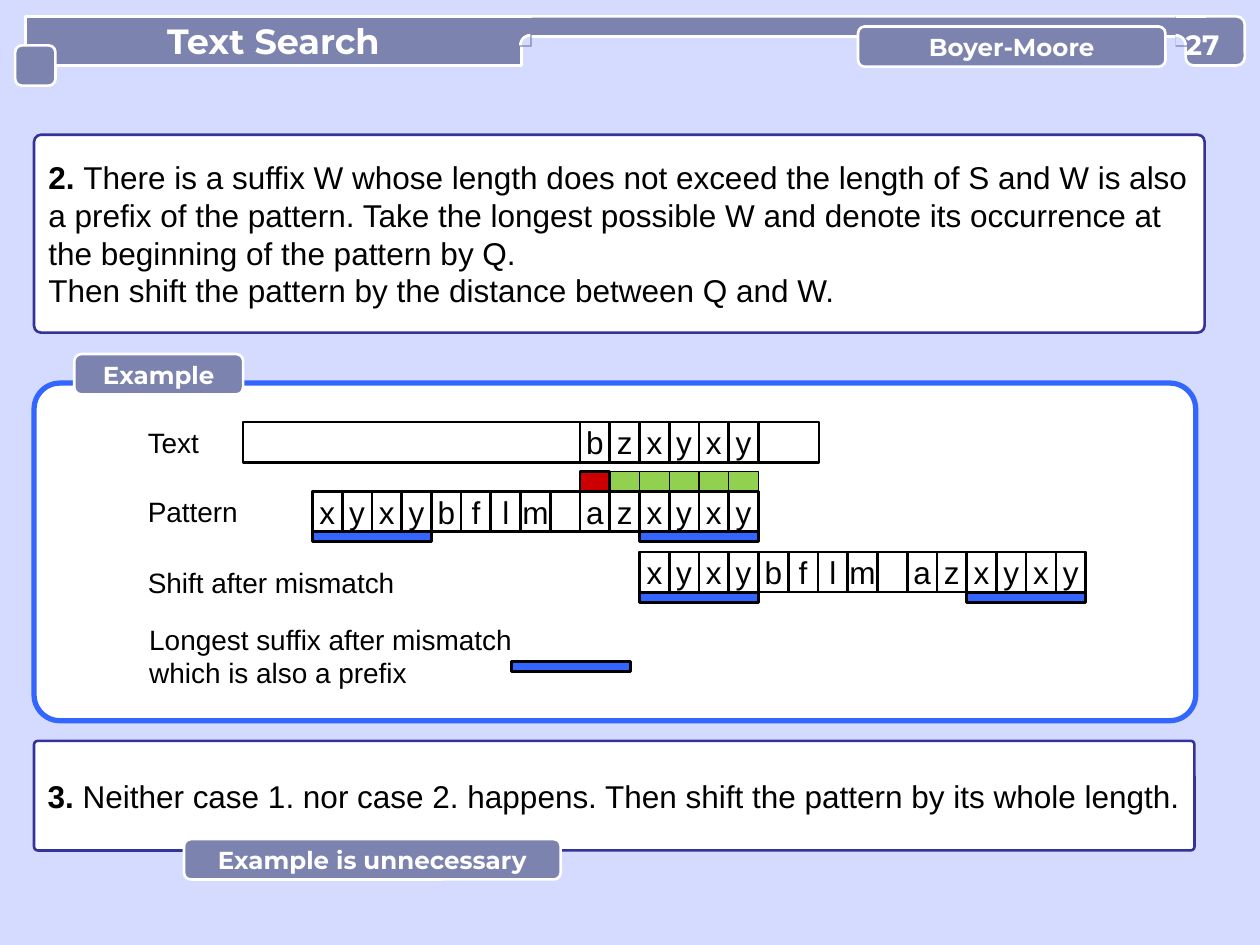
from math import cos, pi, sin

from lxml.etree import SubElement
from pptx import Presentation
from pptx.dml.color import RGBColor
from pptx.enum.shapes import MSO_CONNECTOR as Connector, MSO_SHAPE as Shape
from pptx.enum.text import MSO_ANCHOR as Anchor, MSO_AUTO_SIZE as AutoSize, PP_ALIGN as Align
from pptx.oxml.ns import qn
from pptx.util import Inches, Pt

COLORS = {
    "background": "D5DAFF", "header": "7D83AF", "white": "FFFFFF", "black": "000000",
    "rule": "333399", "blue": "3366FF", "red": "CC0000", "green": "92D050",
}
PATTERN = "xyxybflm azxyxy"
SUFFIX = "bzxyxy"
CELL, ROW = 3.54 / len(PATTERN), 0.32
BAR, MARK = 0.08, 0.16
BORDER = 4
SHIFT = len(PATTERN) - BORDER
MISMATCH = len(PATTERN) - len(SUFFIX)


def color(name):
    return RGBColor.from_string(COLORS[name])


def paint(shape, fill, line=None, weight=1.5):
    if fill:
        shape.fill.solid()
        shape.fill.fore_color.rgb = color(fill)
    else:
        shape.fill.background()
    if line:
        shape.line.color.rgb = color(line)
        shape.line.width = Pt(weight)
    else:
        shape.line.fill.background()


def add_box(page, box, fill, line=None, weight=1.5, radius=None):
    kind = Shape.RECTANGLE if radius is None else Shape.ROUNDED_RECTANGLE
    shape = page.shapes.add_shape(kind, *map(Inches, box))
    shape.shadow.inherit = False
    if radius is not None:
        shape.adjustments[0] = radius
    paint(shape, fill, line, weight)
    return shape


def write(shape, lines, size, ink="black", font="Arial", align=Align.LEFT, wrap=False):
    frame = shape.text_frame
    frame.auto_size = AutoSize.NONE
    frame.word_wrap = wrap
    frame.vertical_anchor = Anchor.MIDDLE
    for index, spans in enumerate(lines):
        para = frame.add_paragraph() if index else frame.paragraphs[0]
        para.alignment = align
        for text, bold in spans:
            span = para.add_run()
            span.text = text
            span.font.size = Pt(size)
            span.font.name = font
            span.font.bold = bold
            span.font.color.rgb = color(ink)


def write_heading(shape, text, size, align=Align.CENTER):
    write(shape, [[(text, True)]], size, "white", "Montserrat", align)


def add_tag(page, box, text):
    write_heading(add_box(page, box, "header", "white", radius=0.17), text, 14)


def add_statement(page, box, lines):
    write(add_box(page, box, "white", "rule", radius=0.035), lines, 18, wrap=True)


def add_label(page, box, lines):
    shape = add_box(page, box, "white", radius=0.163)
    write(shape, [[(line, False)] for line in lines], 16)


def add_outline(page, points, closed):
    corners = [(Inches(x), Inches(y)) for x, y in points]
    builder = page.shapes.build_freeform(*corners[0])
    builder.add_line_segments(corners[1:], close=closed)
    shape = builder.convert_to_shape()
    shape.shadow.inherit = False
    return shape


def add_joint(page, box, center_x, side):
    left, top, width, height = box
    add_box(page, box, "header")
    edge = page.shapes.add_connector(
        Connector.STRAIGHT, Inches(left), Inches(top), Inches(left + width), Inches(top))
    edge.line.color.rgb = color("white")
    edge.line.width = Pt(1.5)
    SubElement(edge.element.spPr, qn("a:effectLst"))
    center_y, radius, steps = top + 0.23, 0.08, 12
    angles = [pi / 2 * step / steps for step in range(steps + 1)]
    arc = [(center_x + side * radius * sin(angle), center_y - radius * cos(angle))
           for angle in angles]
    paint(add_outline(page, arc + [(center_x, center_y)], True), "background")
    paint(add_outline(page, arc, False), None, "white")


def add_title(page, box, text):
    title = page.shapes.title
    title.left, title.top, title.width, title.height = map(Inches, box)
    outline = SubElement(title.element.spPr, qn("a:prstGeom"), prst="roundRect")
    guides = SubElement(outline, qn("a:avLst"))
    SubElement(guides, qn("a:gd"), name="adj", fmla="val 18800")
    paint(title, "header", "white")
    write_heading(title, text, 20)


def add_header(page, box):
    left, top, width, height = box
    right = left + width
    add_title(page, (left, top, 3.94, height), "Text Search")
    add_box(page, (4.06, top, 5.43, 0.16), "header", "white", radius=0.5)
    add_joint(page, (3.98, top, 0.24, 0.24), 4.21, -1)
    add_box(page, (left - 0.08, top + 0.23, 0.32, 0.32), "header", "white", radius=0.17)
    add_box(page, (right - 0.47, top, 0.47, height), "header", "white", radius=0.17)
    add_joint(page, (9.33, top, 0.24, 0.24), 9.33, 1)
    add_tag(page, (6.81, top + 0.08, 2.44, 0.32), "Boyer-Moore")
    number = page.shapes.add_textbox(Inches(right - 0.47), Inches(top + 0.09), Inches(0.4), Inches(0.27))
    frame = number.text_frame
    frame.margin_left = frame.margin_right = frame.margin_top = frame.margin_bottom = 0
    write_heading(number, "27", 16, Align.LEFT)


def add_cells(page, left, top, letters):
    for index, letter in enumerate(letters):
        if letter != " ":
            cell = add_box(page, (left + index * CELL, top, CELL, ROW), "white", "black")
            write(cell, [[(letter, False)]], 18, align=Align.CENTER)


def add_pattern(page, left, top):
    add_box(page, (left, top, CELL * len(PATTERN), ROW), "white", "black")
    add_cells(page, left, top, PATTERN)
    for column in (0, SHIFT):
        add_border_bar(page, left + column * CELL, top + ROW)


def add_border_bar(page, left, top):
    add_box(page, (left, top, CELL * BORDER, BAR), "blue", "black")


def add_example(page, box):
    left, top, width, height = box
    add_box(page, box, "white", "blue", 3, 0.077)
    label_left, pattern_left = left + 0.79, left + 2.21
    text_top, pattern_top, shifted_top = top + 0.31, top + 0.86, top + 1.34
    suffix_left = pattern_left + MISMATCH * CELL

    add_label(page, (label_left, text_top, 0.63, ROW), ["Text"])
    add_label(page, (label_left, pattern_top, 1.02, ROW), ["Pattern"])
    add_label(page, (label_left, shifted_top + 0.08, 1.89, ROW), ["Shift after mismatch"])
    add_label(page, (label_left, top + 1.89, 3.38, 0.55),
              ["Longest suffix after mismatch", "which is also a prefix"])

    add_box(page, (left + 1.66, text_top, 4.57, ROW), "white", "black")
    add_cells(page, suffix_left, text_top, SUFFIX)
    for index in range(len(SUFFIX)):
        fill, weight = ("green", 0.75) if index else ("red", 1.5)
        mark = (suffix_left + index * CELL, pattern_top - MARK, CELL, MARK)
        add_box(page, mark, fill, "black", weight)
    add_pattern(page, pattern_left, pattern_top)
    add_pattern(page, pattern_left + SHIFT * CELL, shifted_top)
    add_border_bar(page, left + 3.79, top + 2.21)
    add_tag(page, (left + 0.32, top - 0.23, 1.34, 0.32), "Example")


def main():
    deck = Presentation()
    deck.slide_width, deck.slide_height = Inches(10), Inches(7.5)
    page = deck.slides.add_slide(deck.slide_layouts[5])
    page.background.fill.solid()
    page.background.fill.fore_color.rgb = color("background")

    add_header(page, (0.2, 0.13, 9.68, 0.39))
    add_statement(page, (0.27, 1.07, 9.29, 1.57), [
        [("2. ", True), ("There is a suffix W whose length does not exceed the length of S and W is also", False)],
        [("a prefix of the pattern. Take the longest possible W and denote its occurrence at "
          "the beginning of the pattern by Q.", False)],
        [("Then shift the pattern by the distance between Q and W.", False)],
    ])
    add_example(page, (0.27, 3.04, 9.22, 2.68))
    add_statement(page, (0.27, 5.88, 9.21, 0.87), [
        [("3. ", True), ("Neither case 1. nor case 2. happens. Then shift the pattern by its whole length.", False)],
    ])
    add_tag(page, (1.46, 6.66, 2.99, 0.32), "Example is unnecessary")
    deck.save("out.pptx")


if __name__ == "__main__":
    main()
